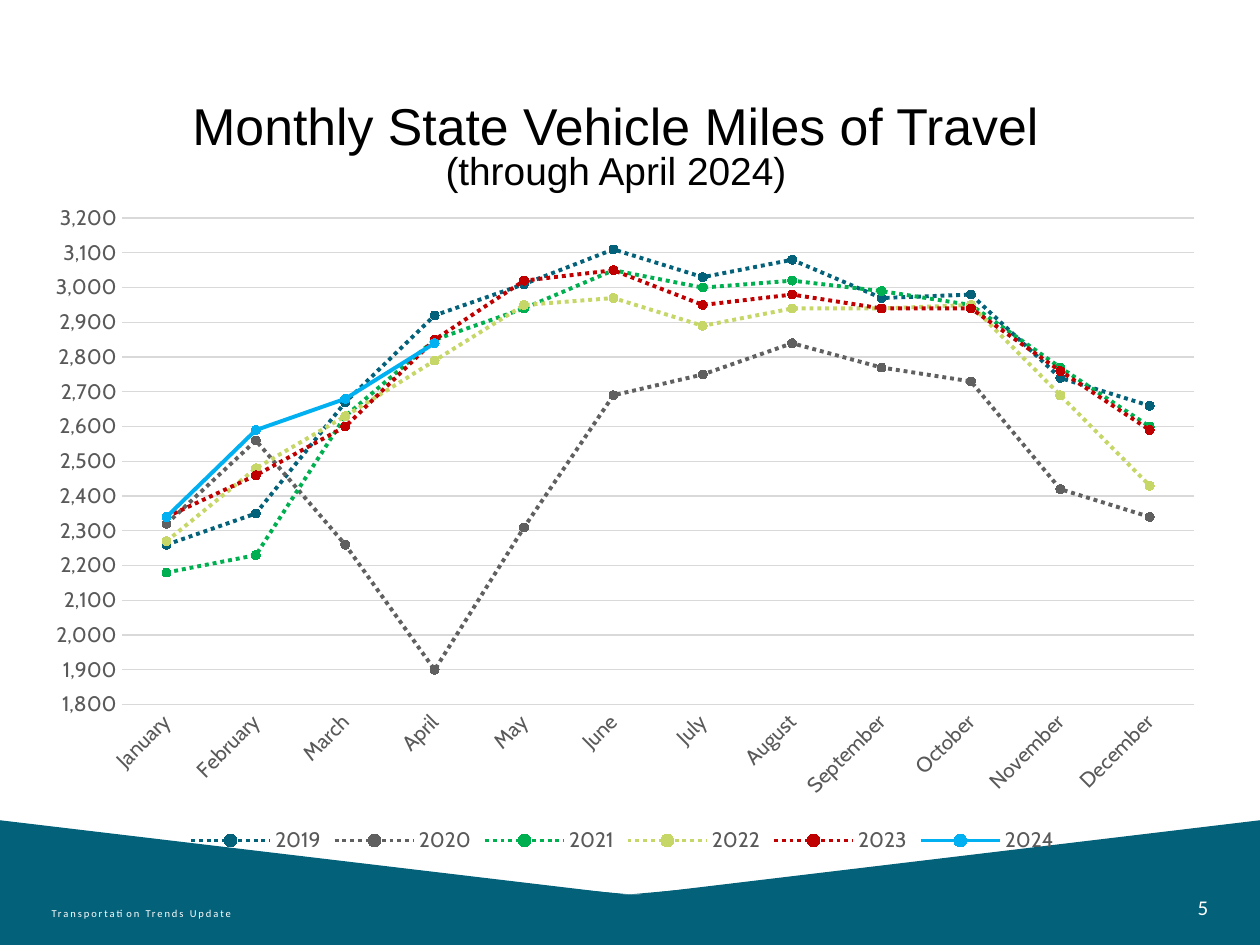
from dataclasses import dataclass

from pptx import Presentation
from pptx.chart.data import CategoryChartData
from pptx.dml.color import RGBColor
from pptx.enum.chart import XL_CHART_TYPE as ChartType
from pptx.enum.chart import XL_LEGEND_POSITION as LegendPos
from pptx.enum.chart import XL_MARKER_STYLE as Marker
from pptx.enum.chart import XL_TICK_MARK as Tick
from pptx.enum.dml import MSO_LINE as Dash
from pptx.enum.text import MSO_ANCHOR as Anchor
from pptx.enum.text import MSO_AUTO_SIZE as AutoSize
from pptx.enum.text import PP_ALIGN as Align
from pptx.oxml import parse_xml
from pptx.oxml.ns import nsdecls, qn
from pptx.util import Inches, Pt

COLORS = {
    "teal": "03617A", "gray": "606060", "green": "00B050", "lime": "C6D667",
    "red": "C00000", "sky": "00B0F0", "grid": "D9D9D9", "label": "595959",
    "white": "FFFFFF", "black": "000000",
}
MONTHS = ["January", "February", "March", "April", "May", "June", "July",
          "August", "September", "October", "November", "December"]


@dataclass
class Year:
    name: str
    color: str
    miles: list[int]
    dotted: bool = True


@dataclass
class FooterText:
    text: str
    left: float
    width: float
    size: float
    align: Align


YEARS = [
    Year("2019", "teal", [2260, 2350, 2670, 2920, 3010, 3110, 3030, 3080, 2970, 2980, 2740, 2660]),
    Year("2020", "gray", [2320, 2560, 2260, 1900, 2310, 2690, 2750, 2840, 2770, 2730, 2420, 2340]),
    Year("2021", "green", [2180, 2230, 2630, 2850, 2940, 3050, 3000, 3020, 2990, 2950, 2770, 2600]),
    Year("2022", "lime", [2270, 2480, 2630, 2790, 2950, 2970, 2890, 2940, 2940, 2950, 2690, 2430]),
    Year("2023", "red", [2340, 2460, 2600, 2850, 3020, 3050, 2950, 2980, 2940, 2940, 2760, 2590]),
    Year("2024", "sky", [2340, 2590, 2680, 2840], dotted=False),
]
FOOTERS = [
    FooterText("Transportation Trends Update", 0.41, 2.67, 6, Align.LEFT),
    FooterText("5", 8.62, 0.97, 12, Align.RIGHT),
]
BAND = [(0, 6.51), (4.96, 7.1), (5.07, 7.1), (10, 6.51), (10, 7.5), (0, 7.5)]
LEFT_WEDGE = [(0, 7.11), (5.01, 7.1), (0.01, 6.65)]
RIGHT_WEDGE = [(10 - x, y) for x, y in LEFT_WEDGE]


def rgb(name: str) -> RGBColor:
    return RGBColor.from_string(COLORS[name])


def set_font(font, name: str, size: float, color: str) -> None:
    font.name = name
    font.size = Pt(size)
    font.bold = False
    font.color.rgb = rgb(color)


def add_polygon(slide, points: list[tuple[float, float]]) -> None:
    start, *rest = [(Inches(x), Inches(y)) for x, y in points]
    builder = slide.shapes.build_freeform(*start)
    builder.add_line_segments(rest, close=True)
    sp = builder.convert_to_shape()
    sp.shadow.inherit = False
    sp.fill.solid()
    sp.fill.fore_color.rgb = rgb("teal")
    sp.line.fill.background()


def add_footer(slide, footer: FooterText) -> None:
    sp = slide.shapes.add_textbox(Inches(footer.left), Inches(6.95), Inches(footer.width), Inches(0.4))
    tf = sp.text_frame
    tf.word_wrap = True
    tf.vertical_anchor = Anchor.BOTTOM
    tf.margin_left = tf.margin_right = 0
    p = tf.paragraphs[0]
    p.alignment = footer.align
    r = p.add_run()
    r.text = footer.text
    set_font(r.font, "Calibri", footer.size, "white")
    r.font._element.set("spc", "110")


def add_title(slide) -> None:
    sp = slide.shapes.title
    sp.left, sp.top, sp.width, sp.height = Inches(0.58), Inches(0.75), Inches(8.62), Inches(0.83)
    tf = sp.text_frame
    tf.word_wrap = True
    tf.auto_size = AutoSize.NONE
    tf.vertical_anchor = Anchor.BOTTOM
    lines = [("Monthly State Vehicle Miles of Travel", 29.6), ("(through April 2024)", 22.2)]
    for i, (text, size) in enumerate(lines):
        p = tf.add_paragraph() if i else tf.paragraphs[0]
        p.alignment = Align.CENTER
        p.line_spacing = 0.8
        p.space_before = Pt(0)
        r = p.add_run()
        r.text = text
        set_font(r.font, "Arial", size, "black")


def format_axis(axis) -> None:
    axis.major_tick_mark = axis.minor_tick_mark = Tick.NONE
    set_font(axis.tick_labels.font, "Cabin", 12, "label")


def style_series(series, year: Year) -> None:
    color = rgb(year.color)
    series.smooth = False
    series.format.line.width = Pt(2.25)
    series.format.line.color.rgb = color
    if year.dotted:
        series.format.line.dash_style = Dash.ROUND_DOT
    marker = series.marker
    marker.style = Marker.CIRCLE
    marker.size = 5
    marker.format.fill.solid()
    marker.format.fill.fore_color.rgb = color
    marker.format.line.color.rgb = color


def place_plot(chart, x: float, y: float, w: float, h: float) -> None:
    area = chart.element.find(".//" + qn("c:plotArea"))
    for old in area.findall(qn("c:layout")):
        area.remove(old)
    area.insert(0, parse_xml(
        f'<c:layout {nsdecls("c")}><c:manualLayout><c:layoutTarget val="inner"/>'
        f'<c:xMode val="edge"/><c:yMode val="edge"/><c:x val="{x}"/><c:y val="{y}"/>'
        f'<c:w val="{w}"/><c:h val="{h}"/></c:manualLayout></c:layout>'))


def add_miles_chart(slide) -> None:
    data = CategoryChartData(number_format="#,##0")
    data.categories = MONTHS
    for year in YEARS:
        data.add_series(year.name, year.miles + [None] * (len(MONTHS) - len(year.miles)))
    chart = slide.shapes.add_chart(
        ChartType.LINE_MARKERS, Inches(0.21), Inches(1.52), Inches(9.46), Inches(5.29), data).chart
    chart.has_title = False
    set_font(chart.font, "Cabin", 10, "black")
    chart.element.find(qn("c:txPr")).addprevious(parse_xml(
        f'<c:spPr {nsdecls("c", "a")}><a:noFill/><a:ln><a:noFill/></a:ln></c:spPr>'))
    place_plot(chart, 0.08, 0.04, 0.9, 0.73)

    months = chart.category_axis
    format_axis(months)
    months.format.line.color.rgb = rgb("grid")
    months.format.line.width = Pt(0.75)
    months.tick_labels.font._element.getparent().getparent().getparent().find(
        qn("a:bodyPr")).set("rot", "-2700000")

    miles = chart.value_axis
    format_axis(miles)
    miles.minimum_scale, miles.maximum_scale, miles.major_unit = 1800, 3200, 100
    miles.tick_labels.number_format = "#,##0"
    miles.tick_labels.number_format_is_linked = False
    miles.format.line.fill.background()
    miles.major_gridlines.format.line.color.rgb = rgb("grid")
    miles.major_gridlines.format.line.width = Pt(0.75)

    chart.has_legend = True
    chart.legend.position = LegendPos.BOTTOM
    chart.legend.include_in_layout = False
    set_font(chart.legend.font, "Cabin", 12, "label")

    plot = chart.plots[0]
    plot.vary_by_categories = False
    for series, year in zip(plot.series, YEARS):
        style_series(series, year)


def main() -> None:
    prs = Presentation()
    prs.slide_width, prs.slide_height = Inches(10), Inches(7.5)
    slide = prs.slides.add_slide(prs.slide_layouts[5])
    for points in (BAND, LEFT_WEDGE, RIGHT_WEDGE):
        add_polygon(slide, points)
    for footer in FOOTERS:
        add_footer(slide, footer)
    add_miles_chart(slide)
    add_title(slide)
    prs.save("out.pptx")


if __name__ == "__main__":
    main()
